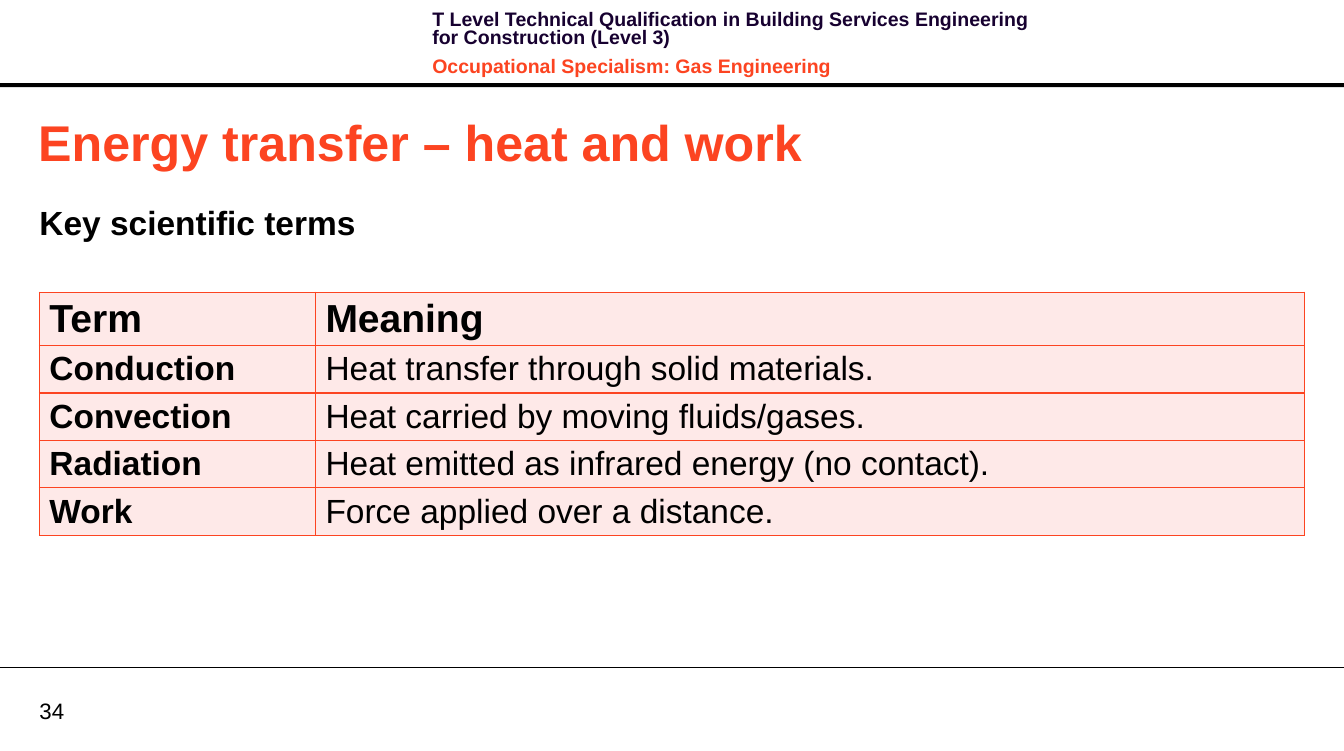
import dataclasses

import pptx
import pptx.dml.color
import pptx.enum.shapes
import pptx.enum.text
import pptx.oxml
import pptx.oxml.ns
import pptx.util

Pt = pptx.util.Pt
MIDDLE = pptx.enum.text.MSO_ANCHOR.MIDDLE
TOP = pptx.enum.text.MSO_ANCHOR.TOP


@dataclasses.dataclass(frozen=True)
class Theme:
    font: str = "Arial"
    black: str = "000000"
    navy: str = "170130"
    orange: str = "FC4421"
    blush: str = "FEE9E8"
    title: int = 36
    table_head: int = 28
    body: int = 24
    number: int = 16
    banner: int = 14


def rgb(value):
    return pptx.dml.color.RGBColor.from_string(value)


class SlideBuilder:
    def __init__(self, slide, theme):
        self.slide = slide
        self.theme = theme

    def add_span(self, para, text, size, color, bold=False):
        span = para.add_run()
        span.text = text
        span.font.name = self.theme.font
        span.font.size = Pt(size)
        span.font.bold = bold
        span.font.color.rgb = rgb(color)

    def frame(self, box, bounds, inset, anchor):
        box.left, box.top, box.width, box.height = map(Pt, bounds)
        frame = box.text_frame
        frame.word_wrap = True
        frame.auto_size = pptx.enum.text.MSO_AUTO_SIZE.NONE
        frame.vertical_anchor = anchor
        frame.margin_left = frame.margin_right = Pt(inset[0])
        frame.margin_top = frame.margin_bottom = Pt(inset[1])
        para = frame.paragraphs[0]
        para.alignment = pptx.enum.text.PP_ALIGN.LEFT
        para.space_before = Pt(0)
        return frame

    def title(self, text, bounds):
        frame = self.frame(self.slide.shapes.title, bounds, (7.2, 3.6), MIDDLE)
        self.add_span(frame.paragraphs[0], text, self.theme.title, self.theme.orange, True)

    def body(self, text, bounds):
        frame = self.frame(self.slide.placeholders[1], bounds, (0, 0), TOP)
        para = frame.paragraphs[0]
        para.line_spacing = 1.1
        para.space_after = Pt(12)
        properties = para._p.get_or_add_pPr()
        properties.set("marL", "0")
        properties.set("indent", "0")
        properties.append(pptx.oxml.parse_xml(
            f'<a:buNone {pptx.oxml.ns.nsdecls("a")}/>'))
        self.add_span(para, text, self.theme.body, self.theme.black, True)

    def banner(self, lines, bounds):
        box = self.slide.shapes.add_textbox(*map(Pt, bounds))
        frame = self.frame(box, bounds, (7.2, 3.6), TOP)
        for index, (text, color) in enumerate(lines):
            para = frame.add_paragraph() if index else frame.paragraphs[0]
            para.line_spacing = Pt(13.1)
            para.space_before = Pt(4 if index else 0)
            para.space_after = Pt(4)
            self.add_span(para, text, self.theme.banner, color, True)

    def page_number(self, text, bounds):
        box = self.slide.shapes.add_textbox(*map(Pt, bounds))
        frame = self.frame(box, bounds, (0, 0), MIDDLE)
        self.add_span(frame.paragraphs[0], text, self.theme.number, self.theme.black)

    def bar(self, bounds):
        bar = self.slide.shapes.add_shape(
            pptx.enum.shapes.MSO_SHAPE.RECTANGLE, *map(Pt, bounds))
        bar.shadow.inherit = False
        bar.fill.solid()
        bar.fill.fore_color.rgb = rgb(self.theme.black)
        bar.line.fill.background()

    def rule(self, top, width):
        rule = self.slide.shapes.add_connector(
            pptx.enum.shapes.MSO_CONNECTOR.STRAIGHT, Pt(0), Pt(top), Pt(width), Pt(top))
        rule.line.color.rgb = rgb(self.theme.black)
        rule.line.width = Pt(0.75)
        rule._element.spPr.append(pptx.oxml.parse_xml(
            f'<a:effectLst {pptx.oxml.ns.nsdecls("a")}/>'))

    def cell(self, cell, text, size, bold):
        properties = cell._tc.get_or_add_tcPr()
        for side in ("lnL", "lnR", "lnT", "lnB"):
            properties.append(pptx.oxml.parse_xml(
                f'<a:{side} {pptx.oxml.ns.nsdecls("a")} w="{Pt(1)}"><a:solidFill>'
                f'<a:srgbClr val="{self.theme.orange}"/></a:solidFill></a:{side}>'))
        cell.fill.solid()
        cell.fill.fore_color.rgb = rgb(self.theme.blush)
        cell.vertical_anchor = MIDDLE
        cell.margin_top = cell.margin_bottom = Pt(3.2)
        self.add_span(cell.text_frame.paragraphs[0], text, size, self.theme.black, bold)

    def table(self, rows, left, top, widths, head_height, row_height):
        heights = [head_height] + [row_height] * (len(rows) - 1)
        table = self.slide.shapes.add_table(
            len(rows), len(widths), Pt(left), Pt(top),
            Pt(sum(widths)), Pt(sum(heights))).table
        table.first_row = False
        table.horz_banding = False
        for column, width in zip(table.columns, widths):
            column.width = Pt(width)
        for row_index, (row, height) in enumerate(zip(rows, heights)):
            table.rows[row_index].height = Pt(height)
            size = self.theme.body if row_index else self.theme.table_head
            for column_index, text in enumerate(row):
                bold = row_index == 0 or column_index == 0
                self.cell(table.cell(row_index, column_index), text, size, bold)


def main():
    theme = Theme()
    width = 964
    margin = 28.3
    deck = pptx.Presentation()
    deck.slide_width, deck.slide_height = Pt(width), Pt(538.6)
    page = SlideBuilder(deck.slides.add_slide(deck.slide_layouts[1]), theme)

    page.bar((0, 59.6, width, 2.9))
    page.page_number("34", (margin, 500, 46, 19.4))
    page.rule(478.8, width)
    page.banner([
        ("T Level Technical Qualification in Building Services Engineering "
         "for Construction (Level 3)", theme.navy),
        ("Occupational Specialism: Gas Engineering", theme.orange),
    ], (303, 5, 458.6, 46))
    page.title("Energy transfer – heat and work", (20.2, 75.6, 916, 51))
    page.body("Key scientific terms", (margin, 141.8, 916, 326))
    page.table([
        ("Term", "Meaning"),
        ("Conduction", "Heat transfer through solid materials."),
        ("Convection", "Heat carried by moving fluids/gases."),
        ("Radiation", "Heat emitted as infrared energy (no contact)."),
        ("Work", "Force applied over a distance."),
    ], margin, 209.5, (198, 709.2), 38.4, 34)
    deck.save("out.pptx")


if __name__ == "__main__":
    main()
